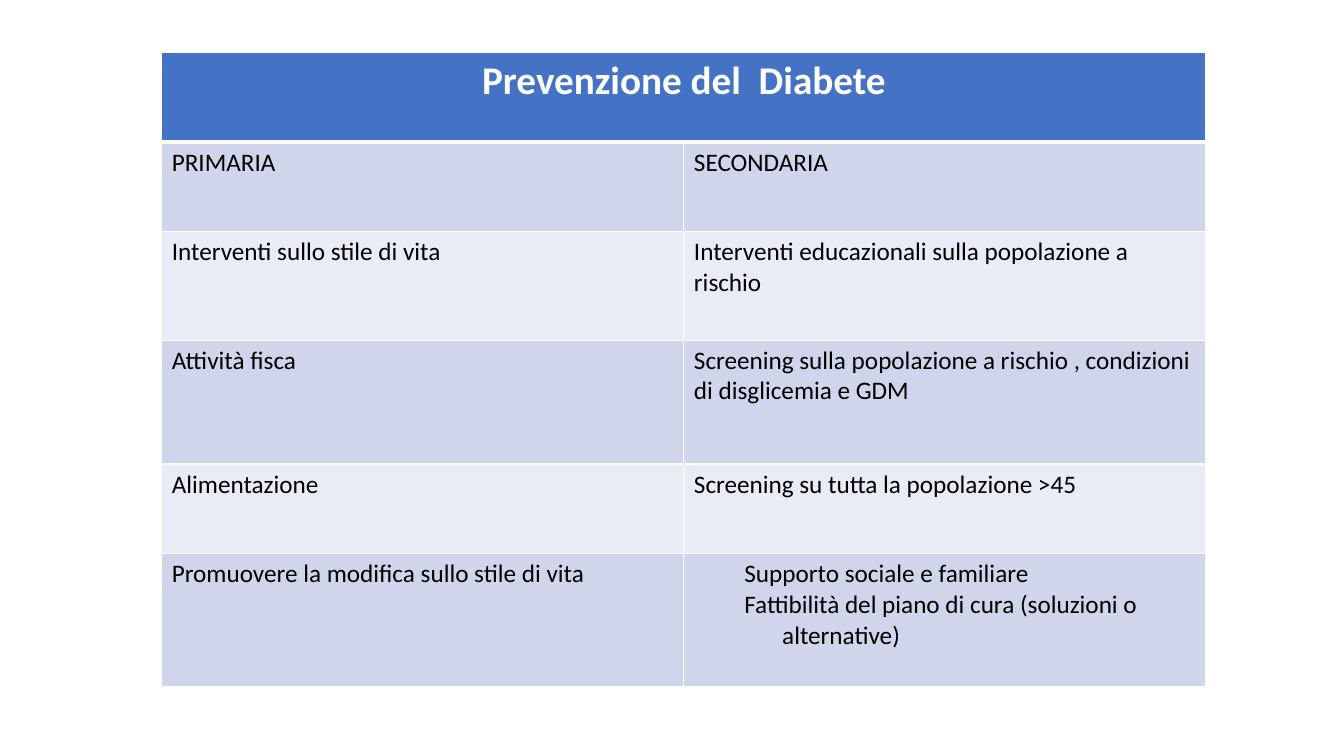
from lxml import etree
from pptx import Presentation
from pptx import util as u
from pptx.dml.color import RGBColor
from pptx.enum import text
from pptx.oxml.ns import qn

BLUE = RGBColor(0x44, 0x72, 0xC4)
BAND_DARK = RGBColor(0xCF, 0xD5, 0xEA)
BAND_LIGHT = RGBColor(0xE9, 0xEB, 0xF5)
WHITE = RGBColor(0xFF, 0xFF, 0xFF)
BLACK = RGBColor(0, 0, 0)

HEADING = "Prevenzione del  Diabete"
ROWS = [
    ("PRIMARIA", "SECONDARIA"),
    ("Interventi sullo stile di vita", "Interventi educazionali sulla popolazione a rischio"),
    ("Attività fisca", "Screening sulla popolazione a rischio , condizioni di disglicemia e GDM"),
    ("Alimentazione", "Screening su tutta la popolazione >45"),
    (
        "Promuovere la modifica sullo stile di vita",
        "Supporto sociale e familiare\nFattibilità del piano di cura (soluzioni o alternative)",
    ),
]
ROW_HEIGHTS = [64, 64, 77.5, 88.5, 64, 95]


def write_text(frame, content, size=18, color=BLACK, bold=False, align=text.PP_ALIGN.LEFT, hanging=None):
    """Write each line of content as a formatted paragraph, with an optional (margin, indent)."""
    for index, line in enumerate(content.split("\n")):
        para = frame.add_paragraph() if index else frame.paragraphs[0]
        para.alignment = align
        if hanging:
            margin, indent = hanging
            para.level = 1
            properties = para._p.get_or_add_pPr()
            properties.set("marL", str(u.Pt(margin)))
            properties.set("indent", str(u.Pt(indent)))
        span = para.add_run()
        span.text = line
        span.font.name = "Calibri"
        span.font.size = u.Pt(size)
        span.font.bold = bold
        span.font.color.rgb = color


def paint_cell(cell, fill, top=1, bottom=1):
    """Give a cell white borders of the given widths and a solid fill."""
    properties = cell._tc.get_or_add_tcPr()
    for side, width in {"lnL": 1, "lnR": 1, "lnT": top, "lnB": bottom}.items():
        line = etree.SubElement(properties, qn(f"a:{side}"), w=str(u.Pt(width)))
        solid = etree.SubElement(line, qn("a:solidFill"))
        etree.SubElement(solid, qn("a:srgbClr"), val=str(WHITE))
    cell.fill.solid()
    cell.fill.fore_color.rgb = fill


def add_prevention_table(page, left, top, width):
    """Place the two-column prevention table under its merged heading."""
    frame = page.shapes.add_table(
        len(ROW_HEIGHTS), 2, u.Pt(left), u.Pt(top), u.Pt(width), u.Pt(sum(ROW_HEIGHTS))
    )
    table = frame.table
    for row, height in zip(table.rows, ROW_HEIGHTS):
        row.height = u.Pt(height)

    for cell in table.rows[0].cells:
        paint_cell(cell, BLUE, bottom=3)
    heading = table.cell(0, 0)
    heading.merge(table.cell(0, 1))
    write_text(heading.text_frame, HEADING, size=28, color=WHITE, bold=True, align=text.PP_ALIGN.CENTER)

    for number, contents in enumerate(ROWS, start=1):
        band = BAND_DARK if number % 2 else BAND_LIGHT
        for cell, content in zip(table.rows[number].cells, contents):
            paint_cell(cell, band, top=3 if number == 1 else 1)
            write_text(cell.text_frame, content, hanging=(63, -27) if "\n" in content else None)


def main():
    """Build the slide and save it."""
    deck = Presentation()
    deck.slide_width = u.Pt(960)
    deck.slide_height = u.Pt(540)
    page = deck.slides.add_slide(deck.slide_layouts[6])
    add_prevention_table(page, left=115.5, top=37.5, width=746)
    deck.save("out.pptx")


if __name__ == "__main__":
    main()
